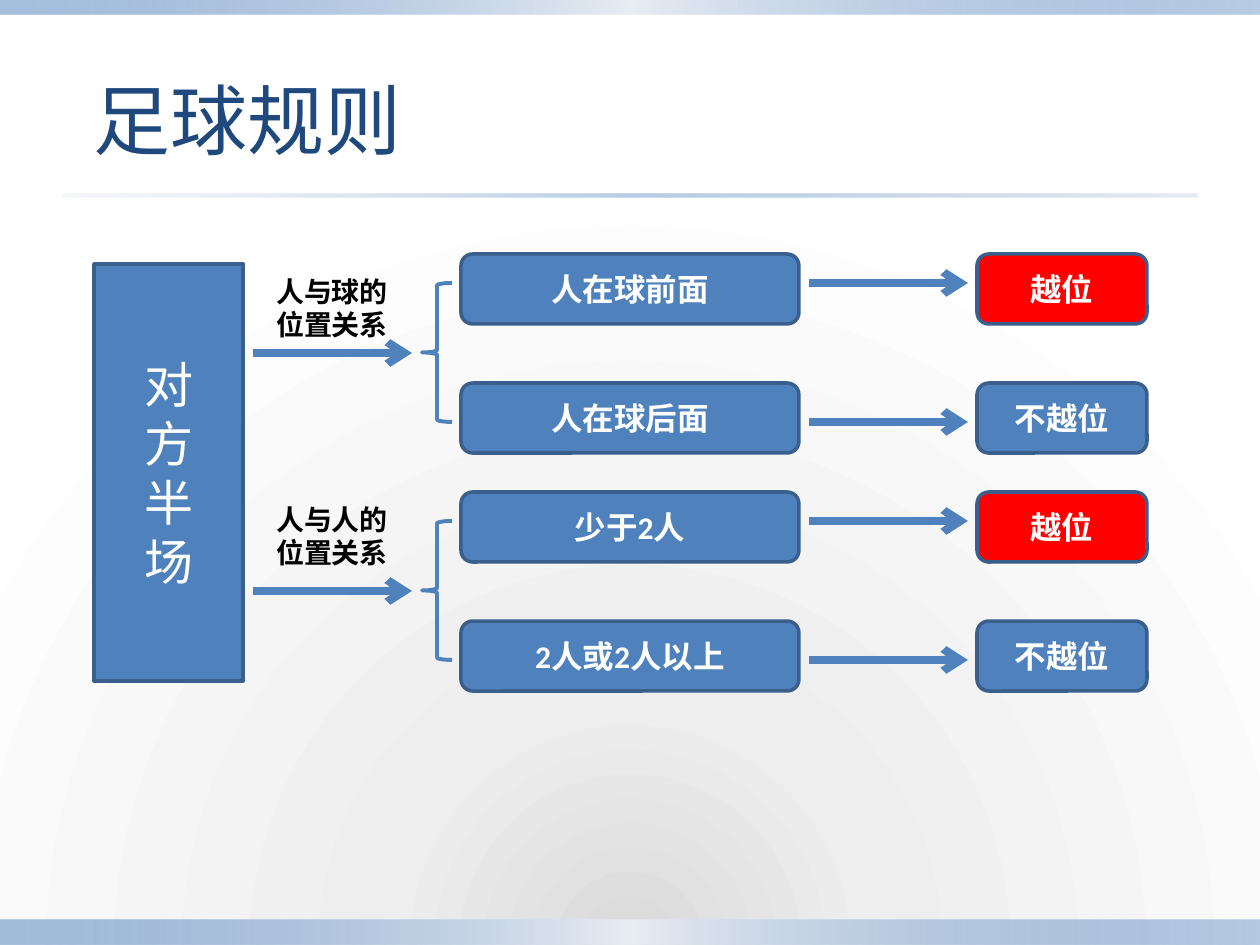
from lxml import etree
from pptx import Presentation
from pptx import util as u
from pptx.dml.color import RGBColor
from pptx.enum import shapes, text
from pptx.oxml import parse_xml
from pptx.oxml.ns import nsdecls, qn

PX = 914400 / 126
COLORS = {
    "blue": "4F81BD", "edge": "3A5F8C", "pale": "E9EDF4", "mist": "D0D8E8",
    "navy": "1F497D", "red": "FF0000", "white": "FFFFFF", "black": "000000",
    "gray": "DADADA", "light": "EEEEEE",
}
FORMS = shapes.MSO_SHAPE
BAR = [(0, "blue", 50), (50, "pale", 100), (100, "blue", 40)]
RULE = [(0, "mist", 20), (50, "blue", 40), (100, "mist", 50)]
GLOW = [(0, "gray", 100), (31, "light", 100), (100, "white", 100)]
GROUPS = [
    (254, 14, ["人与球的", "位置关系"], ["人在球前面", "人在球后面"]),
    (492, 4, ["人与人的", "位置关系"], ["少于2人", "2人或2人以上"]),
]
RESULTS = [("越位", "red"), ("不越位", "blue")]


def px(n):
    return u.Emu(round(n * PX))


def rgb(name):
    return RGBColor.from_string(COLORS[name])


def fade(stops, way):
    """Gradient fill from (percent, colour, opacity) stops."""
    marks = "".join(
        f'<a:gs pos="{at * 1000}"><a:srgbClr val="{COLORS[name]}">'
        f'<a:alpha val="{alpha * 1000}"/></a:srgbClr></a:gs>'
        for at, name, alpha in stops)
    return parse_xml(f'<a:gradFill {nsdecls("a")} rotWithShape="1">'
                     f'<a:gsLst>{marks}</a:gsLst>{way}</a:gradFill>')


def swap(root, fill):
    """Put a gradient in place of the one that root holds."""
    old = root.find(".//" + qn("a:gradFill"))
    old.getparent().replace(old, fill)


def write(frame, lines, size, color, bold=False, face="Calibri"):
    """Centred lines of one paragraph, one run each."""
    frame.word_wrap = True
    para = frame.paragraphs[0]
    para.alignment = text.PP_ALIGN.CENTER
    for i, line in enumerate(lines):
        if i:
            para.add_line_break()
        run = para.add_run()
        run.text = line
        font = run.font
        font.size, font.bold, font.name = u.Pt(size), bold, face
        font.color.rgb = rgb(color)


def shape(slide, form, box, fill=None, line=None, width=2):
    item = slide.shapes.add_shape(form, *map(px, box))
    item.shadow.inherit = False
    if fill:
        item.fill.solid()
        item.fill.fore_color.rgb = rgb(fill)
    else:
        item.fill.background()
    if line:
        item.line.color.rgb = rgb(line)
        item.line.width = u.Pt(width)
    else:
        item.line.fill.background()
    return item


def block(slide, form, box, lines, size, fill="blue", bold=True):
    item = shape(slide, form, box, fill, "edge")
    item.text_frame.vertical_anchor = text.MSO_ANCHOR.MIDDLE
    write(item.text_frame, lines, size, "white", bold)


def arrow(slide, x, y, w):
    link = slide.shapes.add_connector(
        shapes.MSO_CONNECTOR.STRAIGHT, px(x), px(y), px(x + w), px(y))
    link.line.color.rgb = rgb("blue")
    link.line.width = u.Pt(4.5)
    etree.SubElement(link.line._get_or_add_ln(), qn("a:tailEnd"), type="arrow")
    etree.SubElement(link._element.spPr, qn("a:effectLst"))


def frame(slide, w, h):
    """Background glow, edge bars and the rule under the title."""
    slide.background.fill.gradient()
    swap(slide.background._cSld, fade(
        GLOW, '<a:path path="circle"><a:fillToRect l="50000" t="150000" '
              'r="50000" b="0"/></a:path>'))
    for box, stops in [((0, h - 25, w, 25), BAR), ((0, 0, w, 15), BAR),
                       ((63, 194, w - 126, 3), RULE)]:
        bar = shape(slide, FORMS.RECTANGLE, box)
        bar.fill.gradient()
        swap(bar._element.spPr, fade(stops, '<a:lin ang="0" scaled="0"/>'))


def title(slide, x, y, w, h):
    head = slide.shapes.title
    head.left, head.top, head.width, head.height = map(px, (x, y, w, h))
    body = head.text_frame
    write(body, [" 足球规则"], 44, "navy", face="Cambria")
    body.auto_size = text.MSO_AUTO_SIZE.NONE
    body.vertical_anchor = text.MSO_ANCHOR.MIDDLE
    body.paragraphs[0].alignment = text.PP_ALIGN.LEFT


def branch(slide, x, y, drop, label, cases):
    """One relation, split into two cases with their results."""
    note = slide.shapes.add_textbox(*map(px, (x - 30, y + drop, 218, 80)))
    write(note.text_frame, label, 16, "black", True)
    arrow(slide, x, y + 99, 159)
    shape(slide, FORMS.LEFT_BRACE, (x + 169, y + 29, 30, 139),
          line="blue", width=2.25)
    for i, (case, (result, fill)) in enumerate(zip(cases, RESULTS)):
        top = y + 129 * i
        block(slide, FORMS.ROUNDED_RECTANGLE, (x + 208, top, 338, 70),
              [case], 18)
        arrow(slide, x + 556, y + 29 + 139 * i, 159)
        block(slide, FORMS.ROUNDED_RECTANGLE, (x + 724, top, 170, 70),
              [result], 18, fill)


def main():
    deck = Presentation()
    deck.slide_width, deck.slide_height = px(1260), px(945)
    slide = deck.slides.add_slide(deck.slide_layouts[5])
    frame(slide, 1260, 945)
    title(slide, 64, 66, 1128, 106)
    block(slide, FORMS.RECTANGLE, (94, 264, 149, 417), "对方半场", 28,
          bold=False)
    for y, drop, label, cases in GROUPS:
        branch(slide, 253, y, drop, label, cases)
    deck.save("out.pptx")


if __name__ == "__main__":
    main()
